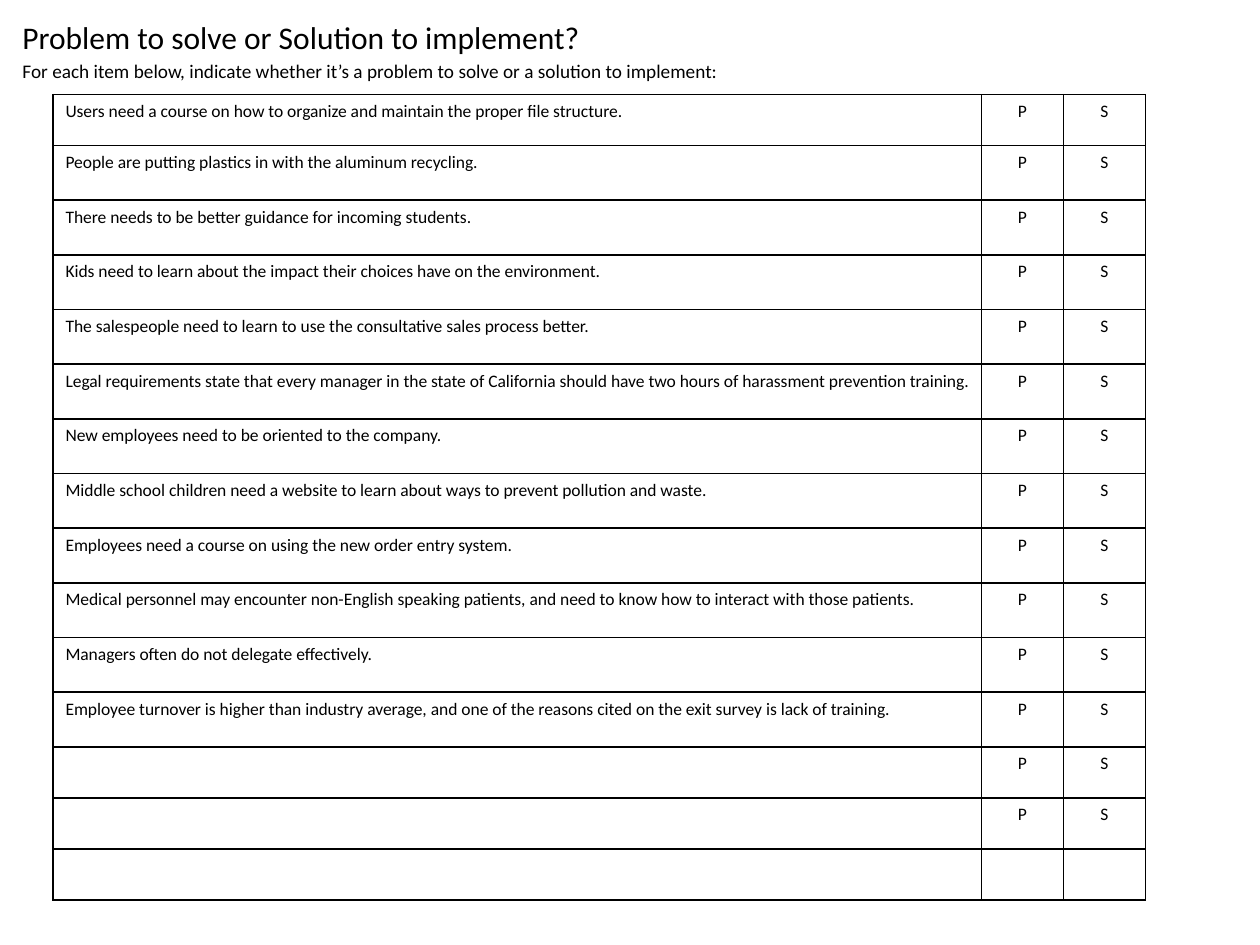
from typing import NamedTuple

from lxml import etree
from pptx import Presentation
from pptx.dml.color import RGBColor
from pptx.enum.text import MSO_ANCHOR, PP_ALIGN
from pptx.oxml.ns import qn
from pptx.util import Inches, Pt

LEFT, CENTER = PP_ALIGN.LEFT, PP_ALIGN.CENTER
MIDDLE = MSO_ANCHOR.MIDDLE
FONT = "Calibri"
BLACK = "000000"
BORDERS = ("a:lnL", "a:lnR", "a:lnT", "a:lnB")


class Heading(NamedTuple):
    text: str
    top: float
    width: float
    height: float
    size: int


class Item(NamedTuple):
    statement: str
    height: float = 0.434
    choices: tuple[str, str] = ("P", "S")


HEADINGS = [
    Heading("Problem to solve or Solution to implement?", 0.08, 9, 0.42, 18),
    Heading(
        "For each item below, indicate whether it’s a problem to solve or a solution to implement:",
        0.42, 9.33, 0.29, 11,
    ),
]
SHORT_ROW = 0.405
COLUMN_WIDTHS = (7.37, 0.65, 0.65)
ITEMS = [
    Item("Users need a course on how to organize and maintain the proper file structure.", SHORT_ROW),
    Item("People are putting plastics in with the aluminum recycling."),
    Item("There needs to be better guidance for incoming students."),
    Item("Kids need to learn about the impact their choices have on the environment."),
    Item("The salespeople need to learn to use the consultative sales process better."),
    Item(
        "Legal requirements state that every manager in the state of California "
        "should have two hours of harassment prevention training."
    ),
    Item("New employees need to be oriented to the company."),
    Item("Middle school children need a website to learn about ways to prevent pollution and waste."),
    Item("Employees need a course on using the new order entry system."),
    Item(
        "Medical personnel may encounter non-English speaking patients, "
        "and need to know how to interact with those patients."
    ),
    Item("Managers often do not delegate effectively."),
    Item(
        "Employee turnover is higher than industry average, "
        "and one of the reasons cited on the exit survey is lack of training."
    ),
    Item("", SHORT_ROW),
    Item("", SHORT_ROW),
    Item("", SHORT_ROW, ("", "")),
]


def color(value: str) -> RGBColor:
    return RGBColor.from_string(value)


def write(tf, text: str, size: int, align=LEFT) -> None:
    tf.text = text
    p = tf.paragraphs[0]
    p.alignment = align
    for r in p.runs:
        r.font.name = FONT
        r.font.size = Pt(size)
        r.font.color.rgb = color(BLACK)


def add_heading(s, heading: Heading) -> None:
    sp = s.shapes.add_textbox(
        Inches(0.08), Inches(heading.top), Inches(heading.width), Inches(heading.height)
    )
    tf = sp.text_frame
    tf.word_wrap = True
    tf.vertical_anchor = MIDDLE
    write(tf, heading.text, heading.size)


def add_borders(cell) -> None:
    tc_pr = cell._tc.get_or_add_tcPr()
    for index, tag in enumerate(BORDERS):
        ln = etree.Element(qn(tag), w=str(Pt(1)))
        fill = etree.SubElement(ln, qn("a:solidFill"))
        etree.SubElement(fill, qn("a:srgbClr"), val=BLACK)
        tc_pr.insert(index, ln)


def add_items(s, items: list[Item]) -> None:
    frame = s.shapes.add_table(
        len(items), len(COLUMN_WIDTHS), Inches(0.42), Inches(0.75),
        Inches(sum(COLUMN_WIDTHS)), Inches(sum(item.height for item in items)),
    )
    table = frame.table
    table.first_row = False
    table.horz_banding = False
    for column, width in zip(table.columns, COLUMN_WIDTHS):
        column.width = Inches(width)
    for row, item in zip(table.rows, items):
        row.height = Inches(item.height)
        for index, text in enumerate((item.statement, *item.choices)):
            cell = row.cells[index]
            write(cell.text_frame, text, 10, CENTER if index else LEFT)
            cell.fill.background()
            add_borders(cell)


def main() -> None:
    prs = Presentation()
    prs.slide_width = Inches(10)
    prs.slide_height = Inches(7.5)
    s = prs.slides.add_slide(prs.slide_layouts[6])
    for heading in HEADINGS:
        add_heading(s, heading)
    add_items(s, ITEMS)
    prs.save("out.pptx")


if __name__ == "__main__":
    main()
